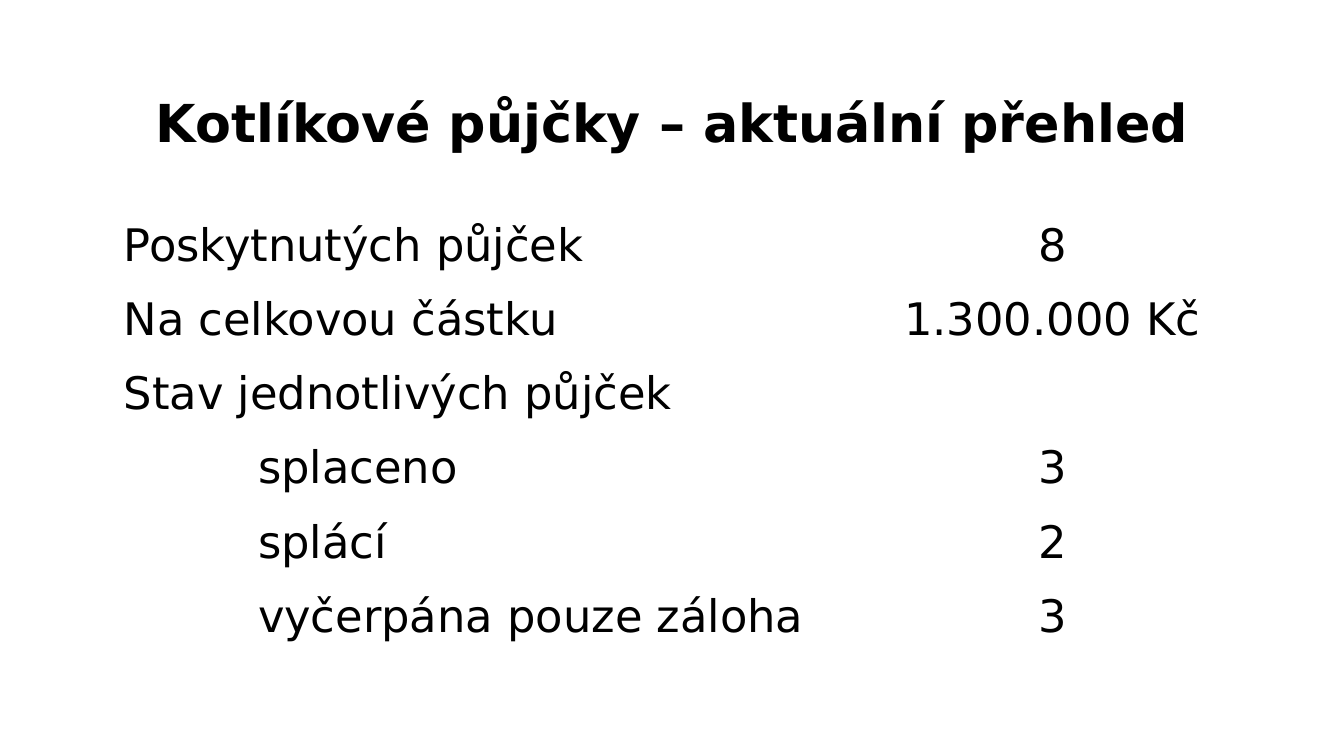
"""Build a slide with an overview of boiler loans."""
from typing import NamedTuple

from pptx import Presentation
from pptx.dml.color import RGBColor
from pptx.enum.text import MSO_ANCHOR, PP_ALIGN
from pptx.util import Inches, Pt

BLACK = RGBColor(0x00, 0x00, 0x00)
FONT = "DejaVu Sans"
MIDDLE = MSO_ANCHOR.MIDDLE
LEFT = PP_ALIGN.LEFT
CENTER = PP_ALIGN.CENTER
COL_WIDTHS = (5.73, 2.38)
TABLE_HEIGHT = 3.31
INSET = Inches(0.01)


class LoanRow(NamedTuple):
    label: str
    value: str
    level: int = 0


ROWS = [
    LoanRow("Poskytnutých půjček", "8"),
    LoanRow("Na celkovou částku", "1.300.000 Kč"),
    LoanRow("Stav jednotlivých půjček", ""),
    LoanRow("splaceno", "3", 2),
    LoanRow("splácí", "2", 2),
    LoanRow("vyčerpána pouze záloha", "3", 2),
]


def set_text(p, text: str, size: int, bold: bool, align: PP_ALIGN) -> None:
    p.text = text
    p.alignment = align
    for font in [p.font] + [r.font for r in p.runs]:
        font.name = FONT
        font.size = Pt(size)
        font.bold = bold
        font.color.rgb = BLACK


def fill_cell(cell, text: str, align: PP_ALIGN, level: int = 0) -> None:
    cell.fill.background()
    cell.vertical_anchor = MIDDLE
    cell.margin_left = cell.margin_right = cell.margin_top = INSET
    cell.margin_bottom = 0
    p = cell.text_frame.paragraphs[0]
    p.level = level
    pPr = p._p.get_or_add_pPr()
    pPr.set("marL", str(Inches(0.5 * level)))
    pPr.set("indent", "0")
    set_text(p, text, 24, False, align)


def add_title(s, text: str) -> None:
    sp = s.shapes.title
    sp.left, sp.top = Inches(0.5), Inches(0.49)
    sp.width, sp.height = Inches(9), Inches(0.83)
    tf = sp.text_frame
    tf.word_wrap = True
    tf.vertical_anchor = MIDDLE
    set_text(tf.paragraphs[0], text, 28, True, CENTER)


def add_loan_table(s, rows: list[LoanRow]) -> None:
    table = s.shapes.add_table(
        len(rows), len(COL_WIDTHS), Inches(0.91), Inches(1.55),
        Inches(sum(COL_WIDTHS)), Inches(TABLE_HEIGHT),
    ).table
    table.first_row = False
    table.horz_banding = False
    for col, width in zip(table.columns, COL_WIDTHS):
        col.width = Inches(width)
    for i, row in enumerate(rows):
        fill_cell(table.cell(i, 0), row.label, LEFT, row.level)
        fill_cell(table.cell(i, 1), row.value, CENTER)


def main() -> None:
    prs = Presentation()
    prs.slide_width = Inches(10)
    prs.slide_height = prs.slide_width * 9 // 16
    s = prs.slides.add_slide(prs.slide_layouts[5])
    add_title(s, "Kotlíkové půjčky – aktuální přehled")
    add_loan_table(s, ROWS)
    prs.save("out.pptx")


if __name__ == "__main__":
    main()
